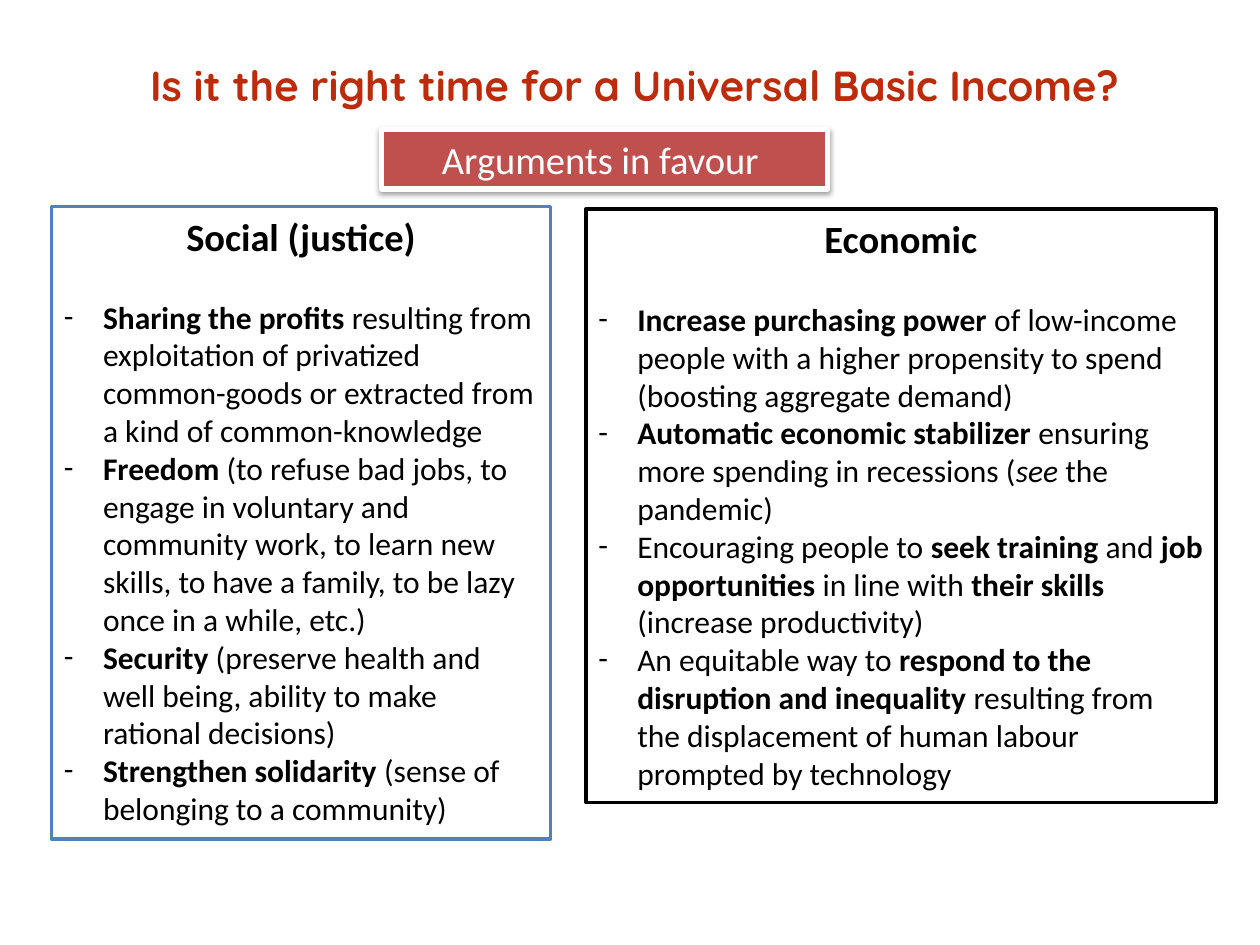
from lxml.etree import SubElement
from pptx import Presentation
from pptx.dml.color import RGBColor
from pptx.enum.shapes import MSO_SHAPE as Shape
from pptx.enum.text import MSO_ANCHOR as Anchor, PP_ALIGN as Align
from pptx.oxml.ns import qn
from pptx.util import Inches, Pt

TITLE = "Is it the right time for a Universal Basic Income?"
BANNER = "Arguments in favour "
PANELS = [
    {
        "heading": "Social (justice)", "line": "4F81BD", "at": (0.41, 1.64, 3.96, 5.02),
        "points": [
            [("Sharing the profits ", "b"),
             ("resulting from exploitation of privatized common-goods or extracted "
              "from a kind of common-knowledge", "")],
            [("Freedom ", "b"),
             ("(to refuse bad jobs, to engage in voluntary and community work, to learn "
              "new skills, to have a family, to be lazy once in a while, etc.)", "")],
            [("Security", "b"),
             (" (preserve health and well being, ability to make rational decisions)", "")],
            [("Strengthen solidarity ", "b"), ("(sense of belonging to a community)", "")],
        ],
    },
    {
        "heading": "Economic", "line": "000000", "at": (4.65, 1.66, 5, 4.71),
        "points": [
            [("Increase purchasing power ", "b"),
             ("of low-income people with a higher propensity to spend "
              "(boosting aggregate demand)", "")],
            [("Automatic economic stabilizer ", "b"),
             ("ensuring more spending in recessions (", ""), ("see ", "i"), ("the pandemic)", "")],
            [("Encouraging people to ", ""), ("seek training ", "b"), ("and ", ""),
             ("job opportunities ", "b"), ("in line with ", ""), ("their skills ", "b"),
             ("(increase productivity)", "")],
            [("An equitable way to ", ""), ("respond to the disruption and inequality ", "b"),
             ("resulting from the displacement of human labour prompted by technology", "")],
        ],
    },
]


def color(value):
    return RGBColor.from_string(value)


def style(font, size, shade, bold=False, italic=False, name="Calibri"):
    font.name, font.size, font.bold, font.italic = name, Pt(size), bold, italic
    font.color.rgb = color(shade)


def add_box(page, at, fill, line, width):
    box = page.shapes.add_shape(Shape.RECTANGLE, *map(Inches, at))
    box.shadow.inherit = False
    box.fill.solid()
    box.fill.fore_color.rgb = color(fill)
    box.line.color.rgb = color(line)
    box.line.width = Pt(width)
    box.text_frame.word_wrap = True
    box.text_frame.vertical_anchor = Anchor.TOP
    return box


def add_heading(box, text, shade, bold):
    box.text_frame.text = text
    para = box.text_frame.paragraphs[0]
    para.alignment = Align.CENTER
    style(para.runs[0].font, 22, shade, bold)
    return para


def add_shadow(box):
    effects = box._element.spPr.find(qn("a:effectLst"))
    shadow = SubElement(effects, qn("a:outerShdw"), blurRad=str(Pt(3.1)), dist=str(Pt(1.6)),
                        dir="5400000", rotWithShape="0")
    shade = SubElement(shadow, qn("a:srgbClr"), val="000000")
    SubElement(shade, qn("a:alpha"), val="38000")


def add_point(box, spans):
    para = box.text_frame.add_paragraph()
    para.alignment = Align.LEFT
    props = para._p.get_or_add_pPr()
    props.set("marL", str(Inches(0.31)))
    props.set("indent", str(-Inches(0.31)))
    SubElement(props, qn("a:buFont"), typeface="Calibri")
    SubElement(props, qn("a:buChar"), char="-")
    for text, look in spans:
        span = para.add_run()
        span.text = text
        style(span.font, 18, "000000", look == "b", look == "i")


def add_title(page):
    title = page.shapes.title
    title.left, title.top, title.width, title.height = map(Inches, (0.43, 0.52, 9.21, 0.71))
    title.text_frame.text = TITLE
    title.text_frame.vertical_anchor = Anchor.TOP
    para = title.text_frame.paragraphs[0]
    para.alignment = Align.CENTER
    para.line_spacing = Pt(22)
    style(para.runs[0].font, 24, "BD2B0B", True, name="Quicksand")


def main():
    """Build the slide on arguments for a universal basic income."""
    deck = Presentation()
    deck.slide_width, deck.slide_height = Inches(10), Inches(7.5)
    page = deck.slides.add_slide(deck.slide_layouts[5])
    add_title(page)
    banner = add_box(page, (3.03, 1.03, 3.54, 0.47), "C0504D", "FFFFFF", 3)
    add_shadow(banner)
    add_heading(banner, BANNER, "FFFFFF", False)
    for panel in PANELS:
        box = add_box(page, panel["at"], "FFFFFF", panel["line"], 2)
        add_heading(box, panel["heading"], "000000", True).space_after = Pt(22)
        for spans in panel["points"]:
            add_point(box, spans)
    deck.save("out.pptx")


if __name__ == "__main__":
    main()
